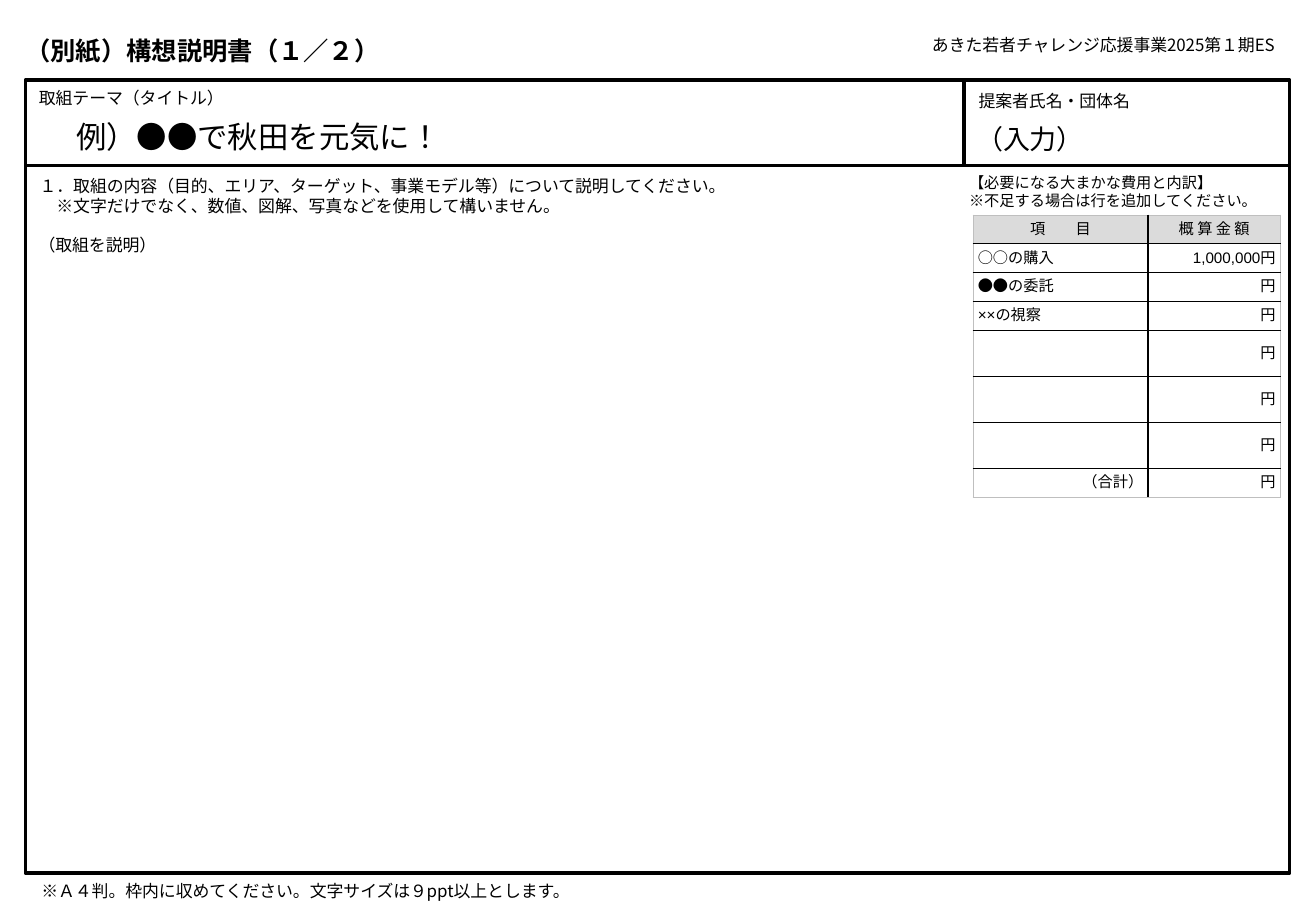
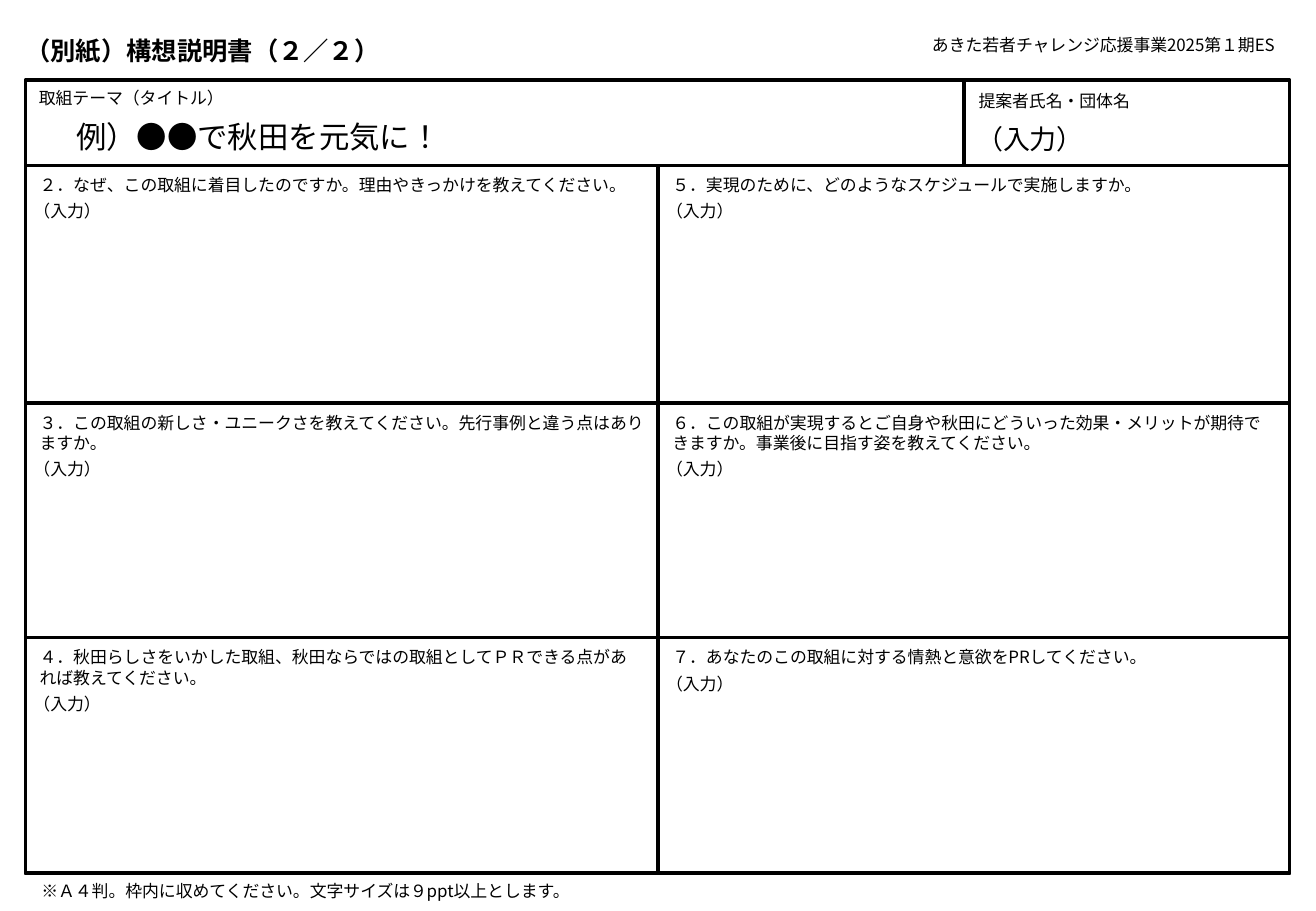
import pptx
import pptx.util
import pptx.dml.color
import pptx.enum.lang
import pptx.enum.shapes
import pptx.enum.text
from lxml import etree

Pt = pptx.util.Pt
ALIGN = pptx.enum.text.PP_ALIGN
ANCHOR = pptx.enum.text.MSO_ANCHOR

HUES = {"ink": "000000", "head": "DBDBDB", "edge": "BFBFBF"}
CJK = "Noto Sans CJK JP"
LEAD = 1.22  # line pitch as a multiple of the text size
LEFT, RIGHT, SPLIT, MID = 15, 764.5, 571.5, 390
TOP, BODY, FOOT = 47.5, 98, 517.5
ROWS = [BODY, 239, 378, FOOT]

FONTS = {
    "title": {"name": CJK, "size": Pt(15), "bold": True},
    "theme": {"name": CJK, "size": Pt(18)},
    "name": {"name": CJK, "size": Pt(16)},
    "label": {"name": CJK, "size": Pt(10)},
    "note": {"name": CJK, "size": Pt(9)},
    "entry": {"name": "Arial", "size": Pt(10)},
    "cell": {"name": "Arial", "size": Pt(9)},
}
PADS = {"title": (0, 0), "theme": (7.2, 3.6), "name": (7.2, 3.6),
        "label": (8.5, 4.25), "note": (2.85, 2.85), "entry": (2.85, 2.85)}

COSTS = [
    ("項　　目", "概 算 金 額"),
    ("○○の購入", "1,000,000円"),
    ("●●の委託", "円"),
    ("××の視察", "円"),
    ("", "円"),
    ("", "円"),
    ("", "円"),
    ("（合計）", "円"),
]

# Each column of questions: text, box width, number of lines
ASKS = [
    [("２．なぜ、この取組に着目したのですか。理由やきっかけを教えてください。", 372, 1),
     ("３．この取組の新しさ・ユニークさを教えてください。先行事例と違う点はありますか。", 378, 2),
     ("４．秋田らしさをいかした取組、秋田ならではの取組としてＰＲできる点があれば教えてください。", 372, 2)],
    [("５．実現のために、どのようなスケジュールで実施しますか。", 372, 1),
     ("６．この取組が実現するとご自身や秋田にどういった効果・メリットが期待できますか。事業後に目指す姿を教えてください。", 374, 2),
     ("７．あなたのこの取組に対する情熱と意欲をPRしてください。", 372, 1)],
]


def tint(key):
    return pptx.dml.color.RGBColor.from_string(HUES[key])


def apply(thing, form):
    for key, value in form.items():
        setattr(thing, key, value)


def node(parent, tag, **attrs):
    return etree.SubElement(parent, pptx.oxml.ns.qn(tag), **attrs)


def write(frame, lines, style, align=ALIGN.LEFT):
    """Fill a text frame, one paragraph a line, at a fixed line pitch."""
    font = FONTS[style]
    for i, line in enumerate(lines):
        para = frame.add_paragraph() if i else frame.paragraphs[0]
        apply(para, {"alignment": align,
                     "line_spacing": Pt(round(font["size"].pt * LEAD, 1))})
        if line:
            run = para.add_run()
            run.text = line
            apply(run.font, font)
            run.font.language_id = pptx.enum.lang.MSO_LANGUAGE_ID.JAPANESE
            run.font.color.rgb = tint("ink")
            node(run.font._element, "a:ea", typeface=CJK)


def text(slide, x, y, w, h, lines, style="label", align=ALIGN.LEFT):
    frame = slide.shapes.add_textbox(Pt(x), Pt(y), Pt(w), Pt(h)).text_frame
    side, rim = (Pt(pad) for pad in PADS[style])
    apply(frame, {
        "word_wrap": True,
        "margin_left": side, "margin_right": side,
        "margin_top": rim, "margin_bottom": rim,
        "vertical_anchor": ANCHOR.MIDDLE if style == "title" else ANCHOR.TOP,
    })
    if style != "title":
        frame.auto_size = pptx.enum.text.MSO_AUTO_SIZE.SHAPE_TO_FIT_TEXT
    write(frame, lines, style, align)


def box(slide, x, y, right, base):
    kind = pptx.enum.shapes.MSO_SHAPE.RECTANGLE
    shape = slide.shapes.add_shape(kind, Pt(x), Pt(y), Pt(right - x), Pt(base - y))
    shape.shadow.inherit = False
    shape.fill.background()
    shape.line.color.rgb = tint("ink")
    shape.line.width = Pt(2)


def rule(cell, sides):
    """Draw cell borders; sides maps L, R, T, B to True for an outer edge."""
    props = cell._tc.get_or_add_tcPr()
    for side, outer in sides.items():
        line = node(props, "a:ln" + side, w=str(Pt(0.5 if outer else 1)))
        fill = node(line, "a:solidFill")
        node(fill, "a:srgbClr", val=HUES["edge" if outer else "ink"])


def costs(slide, x, y):
    count, tall, wide = len(COSTS), 17.1, (103.7, 78.5)
    table = slide.shapes.add_table(count, 2, Pt(x), Pt(y), Pt(sum(wide)),
                                   Pt(count * tall)).table
    apply(table, {"first_row": False, "horz_banding": False})
    for col, w in zip(table.columns, wide):
        col.width = Pt(w)
    pad = Pt(2.85)
    for r, words in enumerate(COSTS):
        table.rows[r].height = Pt(tall)
        for c, word in enumerate(words):
            cell = table.cell(r, c)
            apply(cell, {"margin_left": pad, "margin_right": pad,
                         "margin_top": pad, "margin_bottom": pad,
                         "vertical_anchor": ANCHOR.MIDDLE})
            rule(cell, {"L": c == 0, "R": c == 1, "T": r == 0, "B": r == count - 1})
            if r == 0:
                cell.fill.solid()
                cell.fill.fore_color.rgb = tint("head")
                align = ALIGN.CENTER
            else:
                cell.fill.background()
                align = ALIGN.RIGHT if c or r == count - 1 else ALIGN.LEFT
            write(cell.text_frame, [word], "cell" if r else "note", align)


def page(deck, title):
    """Add a slide with the shared title, header cells, frame and footer."""
    slide = deck.slides.add_slide(deck.slide_layouts[6])
    box(slide, LEFT, TOP, SPLIT, BODY)
    box(slide, SPLIT, TOP, RIGHT, BODY)
    box(slide, LEFT, BODY, RIGHT, FOOT)
    text(slide, LEFT, 16, 375, 27, [title], "title")
    text(slide, 497.5, 16, 266.5, 21,
         ["あきた若者チャレンジ応援事業2025第１期ES"], align=ALIGN.RIGHT)
    text(slide, 14.5, TOP, 145.5, 21, ["取組テーマ（タイトル）"])
    text(slide, 38, 66, 312, 29, ["例）●●で秋田を元気に！"], "theme")
    text(slide, SPLIT, 49, 112, 21, ["提案者氏名・団体名"])
    text(slide, SPLIT, 68.5, 192, 26.5, ["（入力）"], "name")
    text(slide, 16, FOOT, 443, 21,
         ["※Ａ４判。枠内に収めてください。文字サイズは９ppt以上とします。"])
    return slide


def plan(deck):
    slide = page(deck, "（別紙）構想説明書（１／２）")
    text(slide, LEFT, 99.5, 551.5, 33, [
        "１．取組の内容（目的、エリア、ターゲット、事業モデル等）について説明してください。",
        "　※文字だけでなく、数値、図解、写真などを使用して構いません。"])
    text(slide, 20, 136, 551.5, 18, ["（取組を説明）"], "entry")
    text(slide, SPLIT, 99.5, 187, 27.5, [
        "【必要になる大まかな費用と内訳】",
        "※不足する場合は行を追加してください。"], "note")
    costs(slide, 576.7, 127.4)


def survey(deck):
    slide = page(deck, "（別紙）構想説明書（２／２）")
    for x, right, asks in zip((LEFT, MID), (MID, RIGHT), ASKS):
        for y, base, (ask, wide, lines) in zip(ROWS, ROWS[1:], asks):
            box(slide, x, y, right, base)
            text(slide, x, y + 1, wide, 8.5 + 12.2 * lines, [ask])
            text(slide, x + 2, y + 6 + 12 * lines, 371, 18, ["（入力）"], "entry")


def main():
    deck = pptx.Presentation()
    apply(deck, {"slide_width": Pt(780), "slide_height": Pt(540)})
    plan(deck)
    survey(deck)
    deck.save("out.pptx")


if __name__ == "__main__":
    main()
